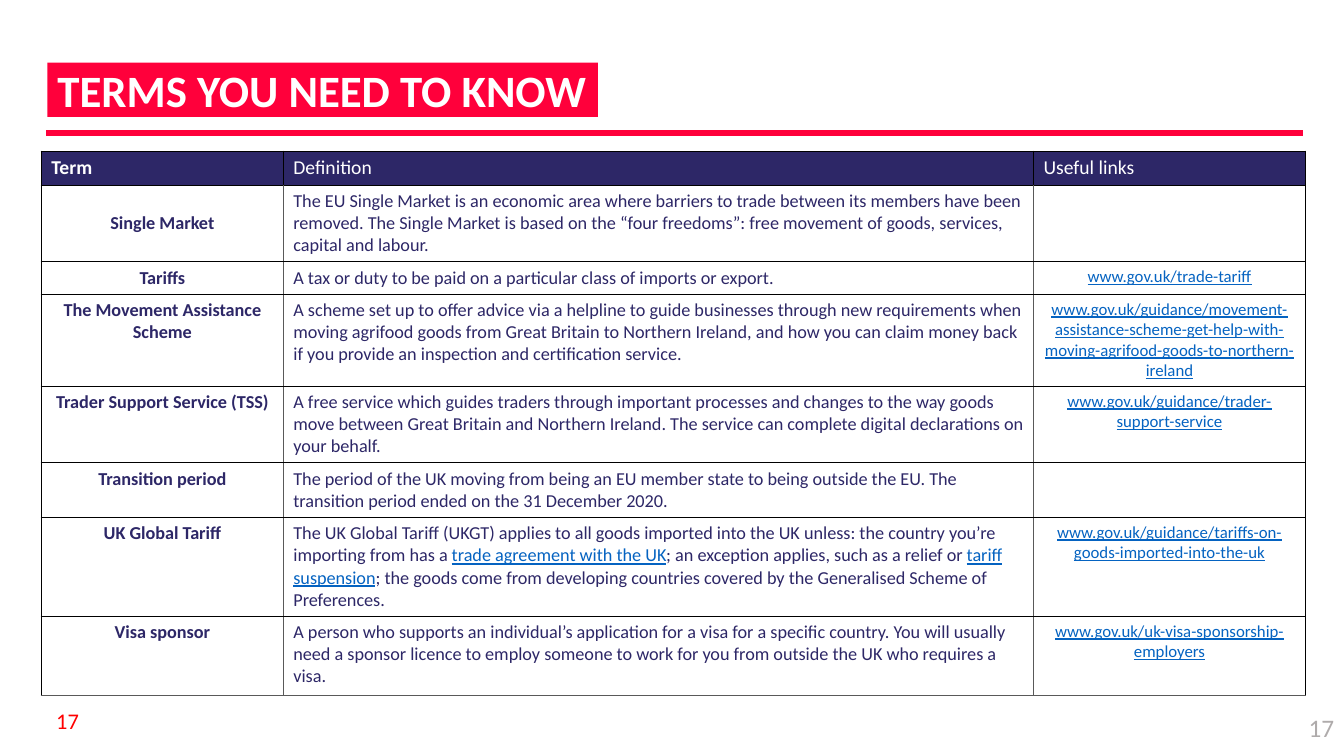
from dataclasses import dataclass

from lxml import etree
from pptx import Presentation
from pptx.dml.color import RGBColor
from pptx.enum.shapes import MSO_CONNECTOR
from pptx.enum.text import MSO_ANCHOR, PP_ALIGN
from pptx.oxml.ns import qn
from pptx.util import Inches, Pt

LEFT, CENTER, RIGHT = PP_ALIGN.LEFT, PP_ALIGN.CENTER, PP_ALIGN.RIGHT
TOP, MIDDLE = MSO_ANCHOR.TOP, MSO_ANCHOR.MIDDLE
STRAIGHT = MSO_CONNECTOR.STRAIGHT
TITLE_ONLY = 5


@dataclass(frozen=True)
class Theme:
    font: str = "Calibri"
    red: str = "FF003B"
    navy: str = "2D2767"
    white: str = "FFFFFF"
    link: str = "0563C1"
    black: str = "000000"
    rule: str = "595959"
    page: str = "FF0000"
    pale: str = "AFABAB"
    title: int = 32
    head: int = 14
    body: int = 13
    small: int = 12
    left_no: int = 16
    right_no: int = 18


THEME = Theme()
COLS = (2.4, 7.44, 2.7)
ROWS = (0.33, 0.76, 0.32, 0.91, 0.76, 0.54, 0.98, 0.79)
HEADS = ("Term", "Definition", "Useful links")

# Term, definition, link; bars enclose linked words
TERMS = (
    ("Single Market",
     "The EU Single Market is an economic area where barriers to trade between "
     "its members have been removed. The Single Market is based on the “four "
     "freedoms”: free movement of goods, services, capital and labour.",
     ""),
    ("Tariffs",
     "A tax or duty to be paid on a particular class of imports or export.",
     "www.gov.uk/trade-tariff"),
    ("The Movement Assistance Scheme",
     "A scheme set up to offer advice via a helpline to guide businesses through "
     "new requirements when moving agrifood goods from Great Britain to Northern "
     "Ireland, and how you can claim money back if you provide an inspection and "
     "certification service.",
     "www.gov.uk/guidance/movement-assistance-scheme-get-help-with-"
     "moving-agrifood-goods-to-northern-ireland"),
    ("Trader Support Service (TSS)",
     "A free service which guides traders through important processes and changes "
     "to the way goods move between Great Britain and Northern Ireland. The "
     "service can complete digital declarations on your behalf.",
     "www.gov.uk/guidance/trader-support-service"),
    ("Transition period",
     "The period of the UK moving from being an EU member state to being outside "
     "the EU. The transition period ended on the 31 December 2020.",
     ""),
    ("UK Global Tariff",
     "The UK Global Tariff (UKGT) applies to all goods imported into the UK "
     "unless: the country you’re importing from has a |trade agreement with the "
     "UK|; an exception applies, such as a relief or |tariff suspension|; the "
     "goods come from developing countries covered by the Generalised Scheme of "
     "Preferences.",
     "www.gov.uk/guidance/tariffs-on-goods-imported-into-the-uk"),
    ("Visa sponsor",
     "A person who supports an individual’s application for a visa for a specific "
     "country. You will usually need a sponsor licence to employ someone to work "
     "for you from outside the UK who requires a visa.",
     "www.gov.uk/uk-visa-sponsorship-employers"),
)


def write(frame, text, size=THEME.body, color=THEME.navy, bold=False,
          line=False, align=LEFT):
    """Fill a text frame; parts between bars look like links."""
    para = frame.paragraphs[0]
    para.alignment = align
    for i, part in enumerate(text.split("|")):
        linked = i % 2 == 1
        run = para.add_run()
        run.text = part
        font = run.font
        font.name, font.size, font.bold = THEME.font, Pt(size), bold
        font.underline = line or linked
        font.color.rgb = RGBColor.from_string(THEME.link if linked else color)


def place(shape, left, top, width, height):
    shape.left, shape.top = Inches(left), Inches(top)
    shape.width, shape.height = Inches(width), Inches(height)


def paint(item, color):
    item.fill.solid()
    item.fill.fore_color.rgb = RGBColor.from_string(color)


def add_title(slide, text):
    title = slide.shapes.title
    place(title, 0.47, 0.62, 5.46, 0.54)
    paint(title, THEME.red)
    frame = title.text_frame
    frame.word_wrap = False
    frame.vertical_anchor = MIDDLE
    frame.margin_top = frame.margin_bottom = 0
    write(frame, text, size=THEME.title, color=THEME.white, bold=True)


def add_rule(slide, left, right, top):
    rule = slide.shapes.add_connector(
        STRAIGHT, Inches(left), Inches(top), Inches(right), Inches(top))
    rule.line.color.rgb = RGBColor.from_string(THEME.red)
    rule.line.width = Pt(4.5)
    etree.SubElement(rule.element.spPr, qn("a:effectLst"))


def add_number(slide, left, top, **style):
    box = slide.shapes.add_textbox(
        Inches(left), Inches(top), Inches(3), Inches(0.4))
    frame = box.text_frame
    frame.word_wrap = True
    frame.vertical_anchor = MIDDLE
    write(frame, "17", **style)


def set_edges(cell, thin):
    """Draw the four borders; those named in thin are fine and grey."""
    props = cell._tc.get_or_add_tcPr()
    for i, side in enumerate("LRTB"):
        width, color = (0.5, THEME.rule) if side in thin else (1, THEME.black)
        edge = etree.Element(qn("a:ln" + side), w=str(Pt(width)))
        fill = etree.SubElement(edge, qn("a:solidFill"))
        etree.SubElement(fill, qn("a:srgbClr"), val=color)
        props.insert(i, edge)


def add_table(slide):
    table = slide.shapes.add_table(
        len(ROWS), len(COLS), Inches(0.41), Inches(1.5),
        Inches(sum(COLS)), Inches(sum(ROWS))).table
    table.horz_banding = False
    for col, width in zip(table.columns, COLS):
        col.width = Inches(width)
    for row, height in zip(table.rows, ROWS):
        row.height = Inches(height)

    # Header row
    for c, text in enumerate(HEADS):
        cell = table.cell(0, c)
        paint(cell, THEME.navy)
        cell.vertical_anchor = MIDDLE
        write(cell.text_frame, text, size=THEME.head, color=THEME.white,
              bold=c == 0)
        set_edges(cell, "")

    # Term rows
    styles = (
        dict(bold=True, align=CENTER),
        dict(),
        dict(size=THEME.small, color=THEME.link, line=True, align=CENTER),
    )
    for r, term in enumerate(TERMS, 1):
        for c, (text, style) in enumerate(zip(term, styles)):
            cell = table.cell(r, c)
            cell.fill.background()
            cell.vertical_anchor = MIDDLE if r == 1 and c == 0 else TOP
            if text:
                write(cell.text_frame, text, **style)
            foot = "B" if r == len(TERMS) else ""
            set_edges(cell, ("R", "LR", "L")[c] + foot)


def main():
    deck = Presentation()
    deck.slide_width, deck.slide_height = Inches(13.33), Inches(7.5)
    slide = deck.slides.add_slide(deck.slide_layouts[TITLE_ONLY])
    add_rule(slide, 0.46, 12.92, 1.32)
    add_table(slide)
    add_title(slide, "TERMS YOU NEED TO KNOW")
    add_number(slide, 10.33, 7.02, size=THEME.right_no, color=THEME.pale,
               align=RIGHT)
    add_number(slide, 0.46, 6.95, size=THEME.left_no, color=THEME.page)
    deck.save("out.pptx")


if __name__ == "__main__":
    main()
